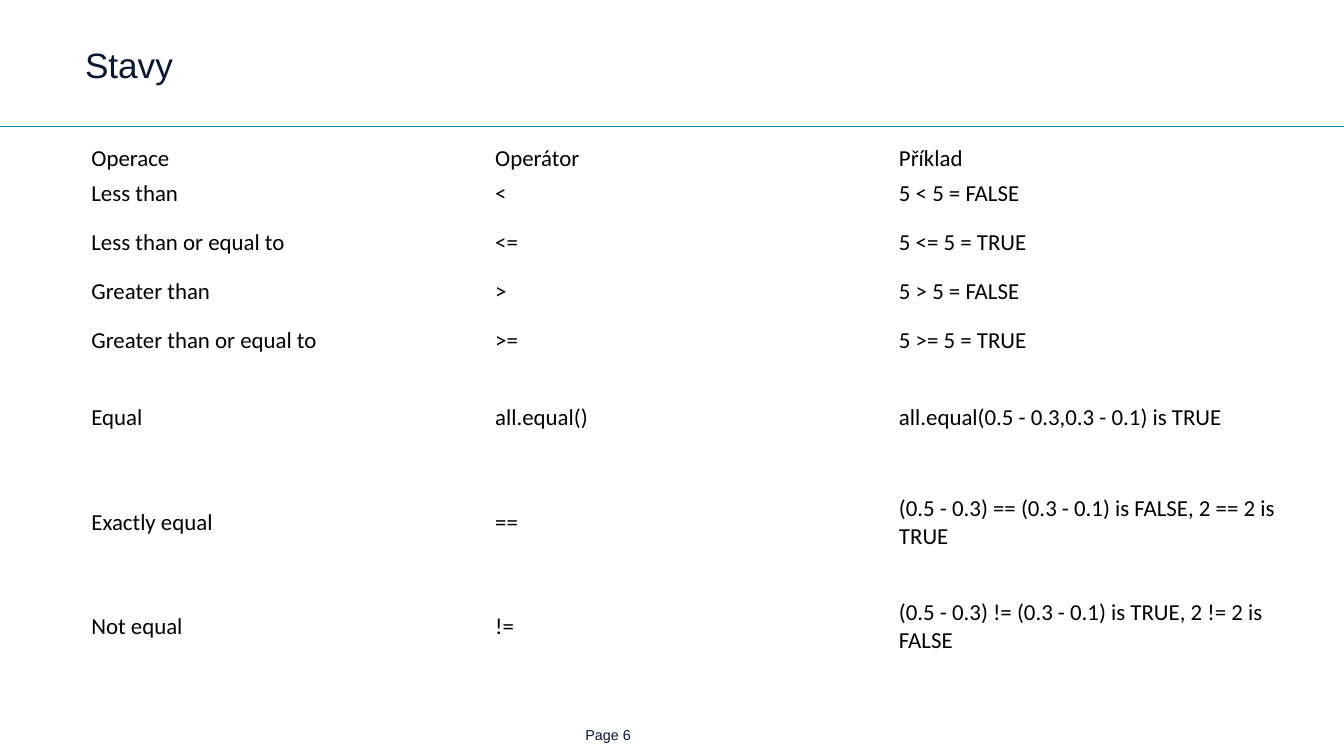
from lxml.etree import SubElement
from pptx import Presentation
from pptx.dml.color import RGBColor
from pptx.enum.shapes import MSO_CONNECTOR
from pptx.enum.text import MSO_ANCHOR, MSO_AUTO_SIZE, PP_ALIGN
from pptx.oxml.ns import qn
from pptx.util import Inches, Pt

COLORS = {"rule": "008CA8", "heading": "0A1731", "body": "000000"}
LEFT, CONTENT_WIDTH = 0.93, 13.25
ROW_HEIGHTS = [0.38, 0.38, 0.69, 0.38, 0.69, 0.99, 1.3, 0.99]
OPERATIONS = [
    ("Operace", "Operátor", "Příklad"),
    ("Less than", "<", "5 < 5 = FALSE"),
    ("Less than or equal to", "<=", "5 <= 5 = TRUE"),
    ("Greater than", ">", "5 > 5 = FALSE"),
    ("Greater than or equal to", ">=", "5 >= 5 = TRUE"),
    ("Equal", "all.equal()", "all.equal(0.5 - 0.3,0.3 - 0.1) is TRUE"),
    ("Exactly equal", "==", "(0.5 - 0.3) == (0.3 - 0.1) is FALSE, 2 == 2 is TRUE"),
    ("Not equal", "!=", "(0.5 - 0.3) != (0.3 - 0.1) is TRUE, 2 != 2 is FALSE"),
]


def write(frame, text, font_name, size, color):
    """Put one left-aligned paragraph in a text frame and format its run."""
    frame.text = text
    paragraph = frame.paragraphs[0]
    paragraph.alignment = PP_ALIGN.LEFT
    font = paragraph.runs[0].font
    font.name, font.size, font.bold = font_name, Pt(size), False
    font.color.rgb = RGBColor.from_string(COLORS[color])
    return paragraph


def set_frame(frame, anchor, right=0):
    """Wrap a text frame with no margins except on the right."""
    frame.word_wrap = True
    frame.auto_size = MSO_AUTO_SIZE.NONE
    frame.vertical_anchor = anchor
    frame.margin_left = frame.margin_top = frame.margin_bottom = 0
    frame.margin_right = Inches(right)


def add_title(slide, text):
    """Place and format the title placeholder."""
    title = slide.shapes.title
    title.left, title.top = Inches(LEFT), Inches(0.55)
    title.width, title.height = Inches(CONTENT_WIDTH), Inches(0.7)
    set_frame(title.text_frame, MSO_ANCHOR.TOP, right=0.09)
    paragraph = write(title.text_frame, text, "Arial", 27.7, "heading")
    paragraph.line_spacing = 0.85
    paragraph.space_before = Pt(0)


def add_rule(slide, y, width):
    """Draw the horizontal rule under the title."""
    rule = slide.shapes.add_connector(
        MSO_CONNECTOR.STRAIGHT, 0, Inches(y), width, Inches(y))
    rule.line.color.rgb = RGBColor.from_string(COLORS["rule"])
    rule.line.width = Pt(0.75)
    SubElement(rule._element.spPr, qn("a:effectLst"))


def add_operations(slide):
    """Add the table of comparison operators."""
    columns = len(OPERATIONS[0])
    table = slide.shapes.add_table(
        len(OPERATIONS), columns, Inches(LEFT), Inches(1.54),
        Inches(CONTENT_WIDTH), Inches(sum(ROW_HEIGHTS))).table
    table.first_row = table.horz_banding = False
    for row, height, texts in zip(table.rows, ROW_HEIGHTS, OPERATIONS):
        row.height = Inches(height)
        for cell, text in zip(row.cells, texts):
            cell.fill.background()
            cell.vertical_anchor = MSO_ANCHOR.MIDDLE
            cell.margin_left = cell.margin_right = Inches(0.07)
            cell.margin_top = cell.margin_bottom = Inches(0.04)
            write(cell.text_frame, text, "Calibri", 18, "body")


def add_page_number(slide, text):
    """Add the page label at the bottom."""
    label = slide.shapes.add_textbox(
        Inches(6.36), Inches(7.97), Inches(0.96), Inches(0.16))
    set_frame(label.text_frame, MSO_ANCHOR.BOTTOM)
    write(label.text_frame, text, "Arial", 11.3, "heading")


def main():
    """Build the slide and save it."""
    deck = Presentation()
    deck.slide_width, deck.slide_height = Inches(14.7), Inches(8.27)
    slide = deck.slides.add_slide(deck.slide_layouts[5])
    add_rule(slide, 1.38, deck.slide_width)
    add_operations(slide)
    add_title(slide, "Stavy")
    add_page_number(slide, " Page 6")
    deck.save("out.pptx")


if __name__ == "__main__":
    main()
